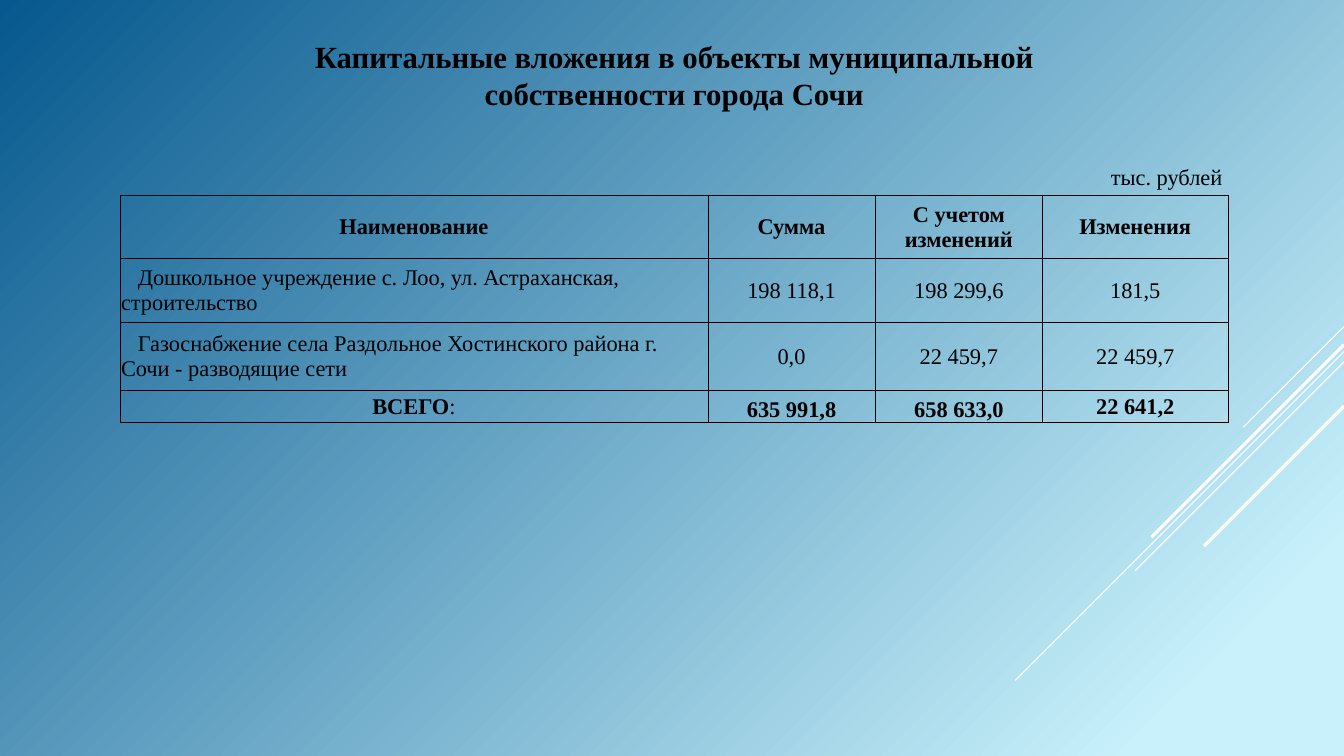
"""Build a slide on capital investment in the municipal property of Sochi."""
from lxml.etree import SubElement
from pptx import Presentation
from pptx.dml.color import RGBColor
from pptx.enum.shapes import MSO_CONNECTOR
from pptx.enum.text import MSO_ANCHOR, MSO_AUTO_SIZE, PP_ALIGN
from pptx.oxml.ns import qn
from pptx.util import Inches, Pt

SLIDE_WIDTH, SLIDE_HEIGHT = Inches(13.33), Inches(7.5)
FONT = "Times New Roman"
BLACK = RGBColor(0x00, 0x00, 0x00)
WHITE = RGBColor(0xFF, 0xFF, 0xFF)
PALE_BLUE = RGBColor(0xC8, 0xF1, 0xFB)
DEEP_BLUE = RGBColor(0x06, 0x58, 0x8E)

TITLE = "Капитальные вложения в объекты муниципальной\nсобственности города Сочи"
INVESTMENTS = [
    ["Наименование", "Сумма", "С учетом изменений", "Изменения"],
    ["Дошкольное учреждение с. Лоо, ул. Астраханская, строительство",
     "198 118,1", "198 299,6", "181,5"],
    ["Газоснабжение села Раздольное Хостинского района г. Сочи - разводящие сети",
     "0,0", "22 459,7", "22 459,7"],
    ["ВСЕГО", "635 991,8", "658 633,0", "22 641,2"],
]
COLUMN_SHARES = [43.74, 12.45, 12.45, 13.8]
ROW_SHARES = [8.27, 8.53, 8.93, 4.27]
RAYS = [(43.2, 13.33, 0.75), (46.53, 43.47, 0.75), (47.87, 27.6, 0.75),
        (45.6, 25.47, 2.25), (53.73, 18.53, 2.25)]


def across(share):
    """Return a percentage of the slide width."""
    return round(SLIDE_WIDTH * share / 100)


def down(share):
    """Return a percentage of the slide height."""
    return round(SLIDE_HEIGHT * share / 100)


def paint_background(slide):
    """Spread a gradient from the bottom right corner."""
    fill = slide.background.fill
    fill.gradient()
    for stop, position, color in zip(fill.gradient_stops, (0.1, 1), (PALE_BLUE, DEEP_BLUE)):
        stop.position = position
        stop.color.rgb = color
    linear = next(slide.element.iter(qn("a:lin")))
    gradient = linear.getparent()
    gradient.remove(linear)
    circle = SubElement(gradient, qn("a:path"), {"path": "circle"})
    SubElement(circle, qn("a:fillToRect"), {"l": "100000", "t": "100000"})


def add_ray(slide, start, run, weight):
    """Draw a white diagonal down and left from the right edge."""
    ray = slide.shapes.add_connector(
        MSO_CONNECTOR.STRAIGHT, SLIDE_WIDTH, down(start),
        SLIDE_WIDTH - down(run), down(start + run))
    ray.line.color.rgb = WHITE
    ray.line.width = Pt(weight)
    SubElement(ray.element.spPr, qn("a:effectLst"))


def format_text(frame, size, bold, alignment):
    """Apply the shared font to every run."""
    for paragraph in frame.paragraphs:
        paragraph.alignment = alignment
        for run in paragraph.runs:
            run.font.name = FONT
            run.font.size = Pt(size)
            run.font.bold = bold
            run.font.color.rgb = BLACK


def add_label(slide, text, left, top, width, height, size, bold, alignment):
    """Add a text box placed by shares of the slide."""
    frame = slide.shapes.add_textbox(
        across(left), down(top), across(width), down(height)).text_frame
    frame.word_wrap = True
    frame.auto_size = MSO_AUTO_SIZE.SHAPE_TO_FIT_TEXT
    frame.text = text
    format_text(frame, size, bold, alignment)


def add_borders(cell):
    """Outline a cell with thin black lines."""
    properties = cell._tc.get_or_add_tcPr()
    for position, side in enumerate(("a:lnL", "a:lnR", "a:lnT", "a:lnB")):
        border = properties.makeelement(qn(side), {"w": str(Pt(0.5))})
        properties.insert(position, border)
        solid = SubElement(border, qn("a:solidFill"))
        SubElement(solid, qn("a:srgbClr"), {"val": str(BLACK)})


def fill_cell(cell, text, bold, alignment, anchor):
    """Write a transparent, bordered cell."""
    cell.fill.background()
    cell.margin_left = cell.margin_right = cell.margin_top = Inches(0.01)
    cell.margin_bottom = 0
    cell.vertical_anchor = anchor
    cell.text = text
    format_text(cell.text_frame, 16, bold, alignment)
    add_borders(cell)


def add_investment_table(slide):
    """Add the table of objects, sums and changes."""
    table = slide.shapes.add_table(
        len(ROW_SHARES), len(COLUMN_SHARES), across(8.93), down(25.87),
        across(sum(COLUMN_SHARES)), down(sum(ROW_SHARES))).table
    table.first_row = table.horz_banding = False
    for column, share in zip(table.columns, COLUMN_SHARES):
        column.width = across(share)
    total_row = len(INVESTMENTS) - 1
    for r, values in enumerate(INVESTMENTS):
        table.rows[r].height = down(ROW_SHARES[r])
        emphasized = r in (0, total_row)
        for c, value in enumerate(values):
            is_object_name = c == 0 and not emphasized
            is_total_sum = r == total_row and c in (1, 2)
            cell = table.cell(r, c)
            fill_cell(cell, value, emphasized,
                      PP_ALIGN.LEFT if is_object_name else PP_ALIGN.CENTER,
                      MSO_ANCHOR.BOTTOM if is_total_sum else MSO_ANCHOR.MIDDLE)
            if is_object_name:
                indent = cell.text_frame.paragraphs[0]._p.get_or_add_pPr()
                indent.set("marL", "0")
                indent.set("indent", str(Pt(12)))
    total_name = table.cell(total_row, 0).text_frame
    total_name.paragraphs[0].add_run().text = ":"
    format_text(total_name, 16, True, PP_ALIGN.CENTER)
    total_name.paragraphs[0].runs[-1].font.bold = False


def main():
    """Assemble and save the slide."""
    presentation = Presentation()
    presentation.slide_width, presentation.slide_height = SLIDE_WIDTH, SLIDE_HEIGHT
    slide = presentation.slides.add_slide(presentation.slide_layouts[6])
    paint_background(slide)
    for start, run, weight in RAYS:
        add_ray(slide, start, run, weight)
    add_label(slide, TITLE, 9.08, 4.4, 82.15, 11.2, 22, True, PP_ALIGN.CENTER)
    add_investment_table(slide)
    add_label(slide, "тыс. рублей", 81.92, 20.93, 12.38, 4.93, 16, False, PP_ALIGN.LEFT)
    presentation.save("out.pptx")


if __name__ == "__main__":
    main()
